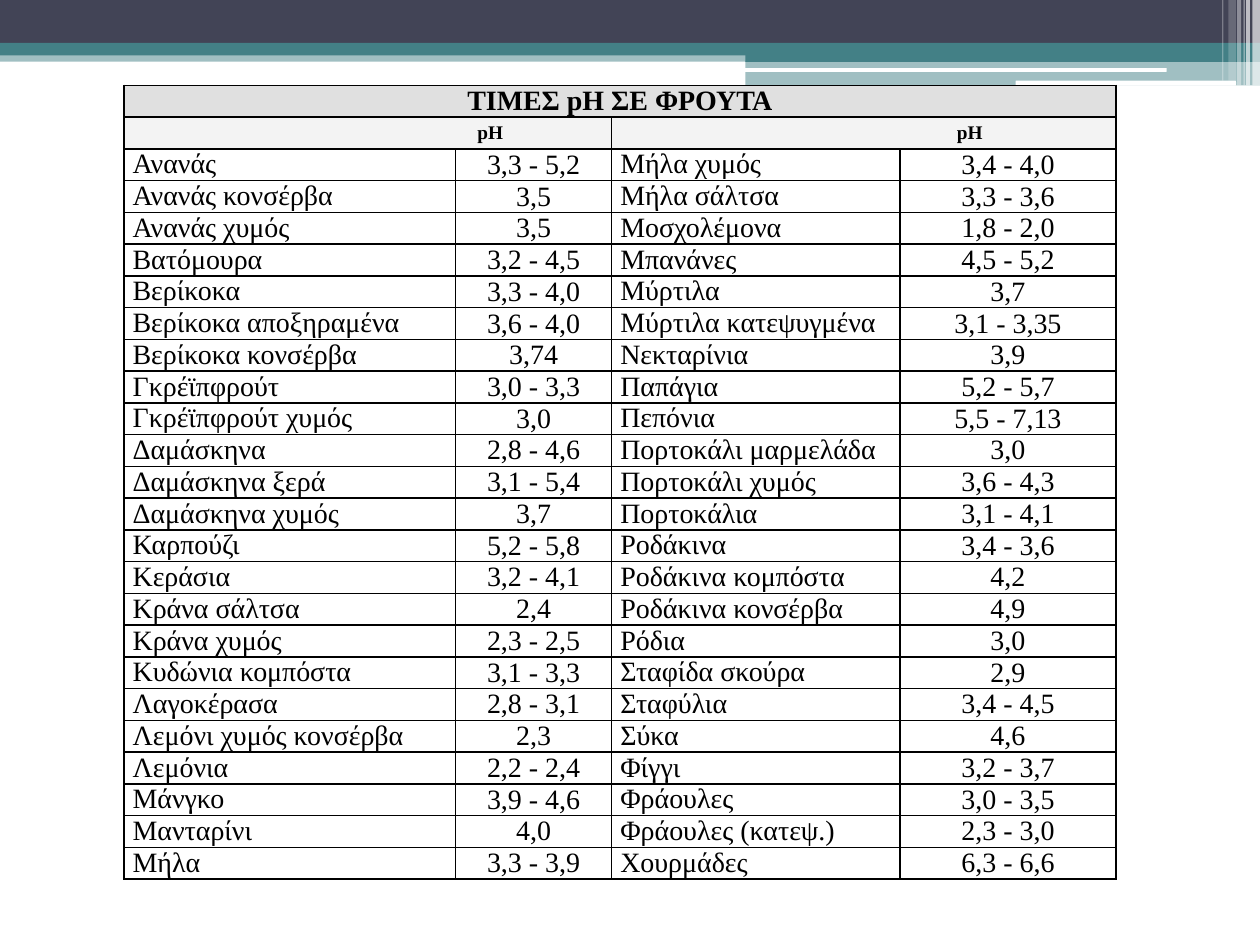
"""Build a slide with a table of fruit pH values under a banded header."""
import pptx
import pptx.dml.color
import pptx.enum.shapes
import pptx.enum.text
import pptx.oxml
import pptx.oxml.ns
import pptx.util

Pt = pptx.util.Pt
RGBColor = pptx.dml.color.RGBColor
SHAPE = pptx.enum.shapes.MSO_SHAPE
ALIGN = pptx.enum.text.PP_ALIGN
ANCHOR = pptx.enum.text.MSO_ANCHOR

NAVY = RGBColor(0x42, 0x44, 0x56)
TEAL = RGBColor(0x43, 0x80, 0x86)
WHITE = RGBColor(0xFF, 0xFF, 0xFF)
BLACK = RGBColor(0x00, 0x00, 0x00)
GREY = RGBColor(0xE0, 0xE0, 0xE0)
PALE = RGBColor(0xF3, 0xF3, 0xF3)

BANDS = [
    (0, 28.8, 720, 6.5, TEAL, 50),
    (0, 0, 720, 24.5, NAVY, 100),
    (0, 24.5, 720, 7.2, TEAL, 100),
    (426, 28.4, 294, 7, TEAL, 100),
    (426, 34.6, 294, 14.2, TEAL, 50),
]
PILLS = [(425.5, 38.9, 241.2, 2.2), (580.3, 46.1, 126, 2.9)]
STRIPES = [
    (715.7, 4.3, 48.8, 65),
    (712.1, 2.2, 48.8, 65),
    (710.6, 0.7, 48.8, 60),
    (707, 2.2, 48.8, 40),
    (702, 4.3, 46.1, 20),
    (698.4, 0.7, 46.1, 30),
]
LEFT, TOP, HEIGHT = 70.8, 48.8, 18.15
WIDTHS = [189.5, 89.2, 164.7, 123.6]
TITLE = "ΤΙΜΕΣ pH ΣΕ ΦΡΟΥΤΑ"
FRUITS = [
    ("Ανανάς", "3,3 - 5,2", "Μήλα χυμός", "3,4 - 4,0"),
    ("Ανανάς κονσέρβα", "3,5", "Μήλα σάλτσα", "3,3 - 3,6"),
    ("Ανανάς χυμός", "3,5", "Μοσχολέμονα", "1,8 - 2,0"),
    ("Βατόμουρα", "3,2 - 4,5", "Μπανάνες", "4,5 - 5,2"),
    ("Βερίκοκα", "3,3 - 4,0", "Μύρτιλα", "3,7"),
    ("Βερίκοκα αποξηραμένα", "3,6 - 4,0", "Μύρτιλα κατεψυγμένα", "3,1 - 3,35"),
    ("Βερίκοκα κονσέρβα", "3,74", "Νεκταρίνια", "3,9"),
    ("Γκρέϊπφρούτ", "3,0 - 3,3", "Παπάγια", "5,2 - 5,7"),
    ("Γκρέϊπφρούτ χυμός", "3,0", "Πεπόνια", "5,5 - 7,13"),
    ("Δαμάσκηνα", "2,8 - 4,6", "Πορτοκάλι μαρμελάδα", "3,0"),
    ("Δαμάσκηνα ξερά", "3,1 - 5,4", "Πορτοκάλι χυμός", "3,6 - 4,3"),
    ("Δαμάσκηνα χυμός", "3,7", "Πορτοκάλια", "3,1 - 4,1"),
    ("Καρπούζι", "5,2 - 5,8", "Ροδάκινα", "3,4 - 3,6"),
    ("Κεράσια", "3,2 - 4,1", "Ροδάκινα κομπόστα", "4,2"),
    ("Κράνα σάλτσα", "2,4", "Ροδάκινα κονσέρβα", "4,9"),
    ("Κράνα χυμός", "2,3 - 2,5", "Ρόδια", "3,0"),
    ("Κυδώνια κομπόστα", "3,1 - 3,3", "Σταφίδα σκούρα", "2,9"),
    ("Λαγοκέρασα", "2,8 - 3,1", "Σταφύλια", "3,4 - 4,5"),
    ("Λεμόνι χυμός κονσέρβα", "2,3", "Σύκα", "4,6"),
    ("Λεμόνια", "2,2 - 2,4", "Φίγγι", "3,2 - 3,7"),
    ("Μάνγκο", "3,9 - 4,6", "Φράουλες", "3,0 - 3,5"),
    ("Μανταρίνι", "4,0", "Φράουλες (κατεψ.)", "2,3 - 3,0"),
    ("Μήλα", "3,3 - 3,9", "Χουρμάδες", "6,3 - 6,6"),
]


def apply(item, values):
    """Set each named attribute of an item."""
    for name, value in values.items():
        setattr(item, name, value)


def add_band(slide, box, tint, alpha=100, kind=SHAPE.RECTANGLE):
    """Add a plain filled shape, see-through when alpha is below 100."""
    shape = slide.shapes.add_shape(kind, *map(Pt, box))
    shape.shadow.inherit = False
    shape.line.fill.background()
    shape.fill.solid()
    shape.fill.fore_color.rgb = tint
    if alpha < 100:
        node = shape.fill._xPr.find(".//" + pptx.oxml.ns.qn("a:srgbClr"))
        child = pptx.oxml.parse_xml(
            f'<a:alpha {pptx.oxml.ns.nsdecls("a")} val="{alpha * 1000}"/>')
        node.append(child)


def add_rules(cell):
    """Draw a thin black line on each side of a cell."""
    props = cell._tc.get_or_add_tcPr()
    for side in ("lnL", "lnR", "lnT", "lnB"):
        props.append(pptx.oxml.parse_xml(
            f'<a:{side} {pptx.oxml.ns.nsdecls("a")} w="{Pt(1)}"><a:solidFill>'
            f'<a:srgbClr val="{BLACK}"/></a:solidFill></a:{side}>'))


def fill_cell(cell, text, size=16, bold=False, align=ALIGN.CENTER, tint=None, indent=0):
    """Write and format the text and fill of one cell."""
    anchor = ANCHOR.TOP if align == ALIGN.LEFT else ANCHOR.MIDDLE
    apply(cell, {"text": text, "vertical_anchor": anchor,
                 "margin_left": Pt(5), "margin_right": Pt(5),
                 "margin_top": 0, "margin_bottom": 0})
    if tint is None:
        cell.fill.background()
    else:
        cell.fill.solid()
        cell.fill.fore_color.rgb = tint
    para = cell.text_frame.paragraphs[0]
    para.alignment = align
    if indent:
        apply_indent = para._p.get_or_add_pPr()
        apply_indent.set("marL", str(Pt(indent)))
    font = para.runs[0].font
    apply(font, {"name": "Times New Roman", "size": Pt(size), "bold": bold})
    font.color.rgb = BLACK


def add_grid(slide):
    """Add the fruit table with its merged heading rows."""
    count = len(FRUITS) + 2
    frame = slide.shapes.add_table(
        count, len(WIDTHS), Pt(LEFT), Pt(TOP), Pt(sum(WIDTHS)), Pt(HEIGHT * count))
    table = frame.table
    apply(table, {"first_row": False, "horz_banding": False})
    for col, width in zip(table.columns, WIDTHS):
        col.width = Pt(width)
    for row in table.rows:
        row.height = Pt(HEIGHT)
    for cell in table.iter_cells():
        add_rules(cell)
    table.cell(0, 0).merge(table.cell(0, 3))
    fill_cell(table.cell(0, 0), TITLE, bold=True, tint=GREY)
    for col, indent in ((0, 140), (2, 121)):
        table.cell(1, col).merge(table.cell(1, col + 1))
        fill_cell(table.cell(1, col), "pH", 11, True, tint=PALE, indent=indent)
    for row, fruit in enumerate(FRUITS, 2):
        for col, text in enumerate(fruit):
            align = ALIGN.CENTER if col % 2 else ALIGN.LEFT
            fill_cell(table.cell(row, col), text, align=align)


def main():
    """Build the slide and save it."""
    deck = pptx.Presentation()
    apply(deck, {"slide_width": Pt(720), "slide_height": Pt(540)})
    slide = deck.slides.add_slide(deck.slide_layouts[6])
    for *box, tint, alpha in BANDS:
        add_band(slide, box, tint, alpha)
    for box in PILLS:
        add_band(slide, box, WHITE, kind=SHAPE.ROUNDED_RECTANGLE)
    for left, width, height, alpha in STRIPES:
        add_band(slide, (left, 0, width, height), WHITE, alpha)
    add_grid(slide)
    deck.save("out.pptx")


if __name__ == "__main__":
    main()
